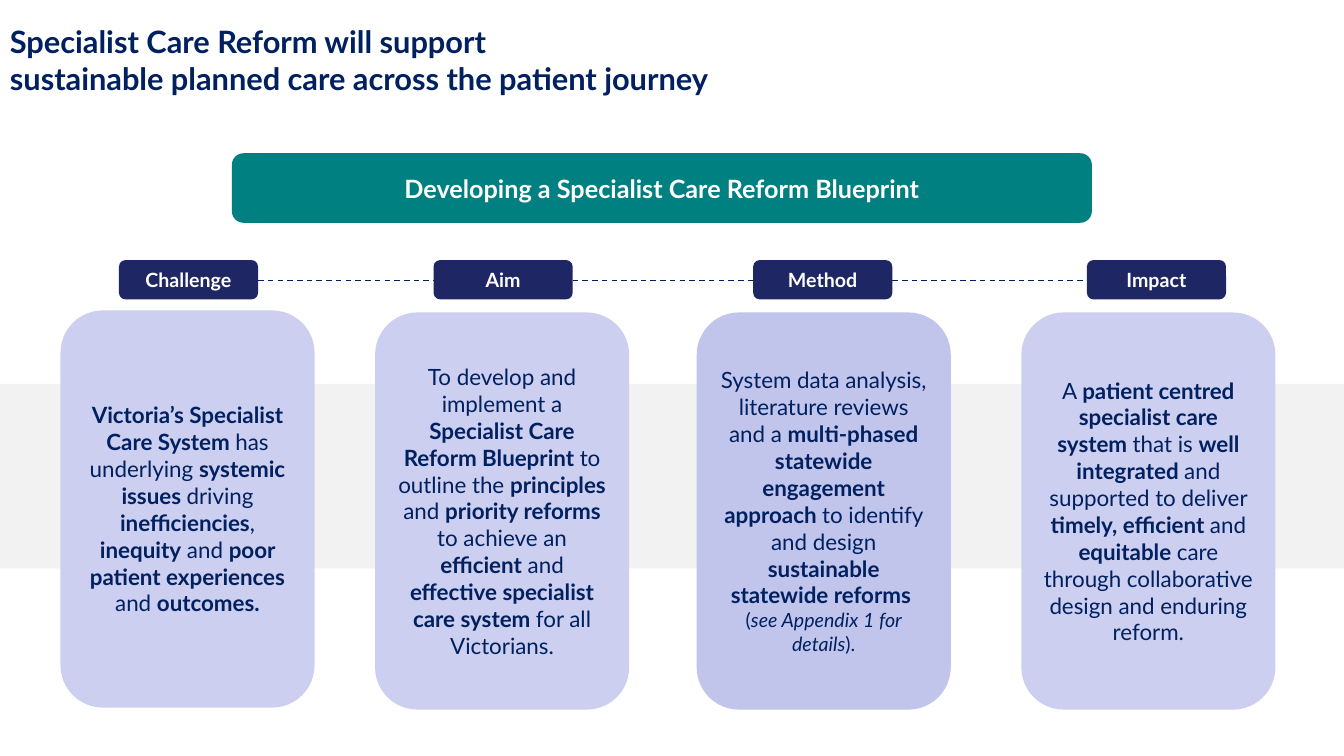
import pptx
import pptx.dml.color
import pptx.enum.dml
import pptx.enum.shapes
import pptx.enum.text
import pptx.oxml.ns
import pptx.util
from lxml import etree

TITLE = [
    "Specialist Care Reform will support",
    "sustainable planned care across the patient journey",
]
BANNER = "Developing a Specialist Care Reform Blueprint"

STAGES = [
    {
        "name": "Challenge", "tag_left": 1.18, "card_left": 0.6, "card_top": 3.08, "fill": "card",
        "text": "*Victoria’s Specialist Care System *has underlying *systemic issues *driving "
                "*inefficiencies*, *inequity* and *poor patient experiences *and *outcomes.*",
    },
    {
        "name": "Aim", "tag_left": 4.3, "card_left": 3.72, "card_top": 3.1, "fill": "card",
        "text": "To develop and implement a *Specialist Care Reform Blueprint *to outline the "
                "*principles *and *priority reforms *to achieve an *efficient* and "
                "*effective specialist care system *for all Victorians.",
    },
    {
        "name": "Method", "tag_left": 7.47, "card_left": 6.91, "card_top": 3.1, "fill": "card_accent",
        "text": "System data analysis, literature reviews and a *multi-phased statewide engagement "
                "approach *to identify and design *sustainable statewide reforms *",
        "note": "(*see Appendix 1 for details*).",
    },
    {
        "name": "Impact", "tag_left": 10.78, "card_left": 10.13, "card_top": 3.1, "fill": "card",
        "text": "A *patient centred specialist care system *that is *well integrated *and supported "
                "to deliver *timely, efficient *and *equitable* care through collaborative design "
                "and enduring reform.",
    },
]

THEME = {
    "font": "Lato",
    "colors": {"ink": "002060", "white": "FFFFFF", "band": "F2F2F2", "banner": "008080",
               "tag": "1F2664", "card": "CCCFEF", "card_accent": "C1C5EC"},
    "sizes": {"title": 22, "banner": 18, "body": 16, "tag": 14, "note": 14},
}

PAGE_WIDTH, PAGE_HEIGHT = 13.33, 7.5
TAG_TOP, TAG_WIDTH, TAG_HEIGHT = 2.58, 1.38, 0.39
CARD_WIDTH, CARD_HEIGHT = 2.52, 3.94
LINE_Y = 2.78

Inches = pptx.util.Inches
SHAPES = pptx.enum.shapes.MSO_SHAPE
ALIGN = pptx.enum.text.PP_ALIGN

deck = pptx.Presentation()
deck.slide_width, deck.slide_height = Inches(PAGE_WIDTH), Inches(PAGE_HEIGHT)
page = deck.slides.add_slide(deck.slide_layouts[6])


def color(name):
    return pptx.dml.color.RGBColor.from_string(THEME["colors"][name])


def write(para, text, size, ink="ink", bold=False, align=ALIGN.CENTER, emphasis="bold"):
    para.alignment = align
    for index, part in enumerate(text.split("*")):
        if part:
            span = para.add_run()
            span.text = part
            span.font.name = THEME["font"]
            span.font.size = pptx.util.Pt(THEME["sizes"][size])
            span.font.color.rgb = color(ink)
            span.font.bold = bold
            if index % 2:
                setattr(span.font, emphasis, True)


def add_panel(kind, left, top, width, height, fill):
    panel = page.shapes.add_shape(kind, Inches(left), Inches(top), Inches(width), Inches(height))
    panel.shadow.inherit = False
    panel.fill.solid()
    panel.fill.fore_color.rgb = color(fill)
    panel.line.fill.background()
    panel.text_frame.word_wrap = True
    panel.text_frame.vertical_anchor = pptx.enum.text.MSO_ANCHOR.MIDDLE
    return panel.text_frame


def add_link(start, end):
    link = page.shapes.add_connector(pptx.enum.shapes.MSO_CONNECTOR.STRAIGHT,
                                     Inches(start), Inches(LINE_Y), Inches(end), Inches(LINE_Y))
    link.line.color.rgb = color("ink")
    link.line.width = pptx.util.Pt(1)
    link.line.dash_style = pptx.enum.dml.MSO_LINE.DASH
    etree.SubElement(link._element.spPr, pptx.oxml.ns.qn("a:effectLst"))


add_panel(SHAPES.RECTANGLE, 0, 3.81, PAGE_WIDTH, 1.83, "band")

title = page.shapes.add_textbox(0, Inches(0.18), Inches(8.28), Inches(0.99)).text_frame
title.word_wrap = True
for index, line in enumerate(TITLE):
    para = title.add_paragraph() if index else title.paragraphs[0]
    write(para, line, "title", bold=True, align=ALIGN.LEFT)

banner = add_panel(SHAPES.ROUNDED_RECTANGLE, 2.3, 1.52, 8.53, 0.69, "banner")
write(banner.paragraphs[0], BANNER, "banner", ink="white", bold=True)

for stage, following in zip(STAGES, STAGES[1:]):
    add_link(stage["tag_left"] + TAG_WIDTH, following["tag_left"])

for stage in STAGES:
    tag = add_panel(SHAPES.ROUNDED_RECTANGLE, stage["tag_left"], TAG_TOP, TAG_WIDTH, TAG_HEIGHT, "tag")
    write(tag.paragraphs[0], stage["name"], "tag", ink="white", bold=True)
    card = add_panel(SHAPES.ROUNDED_RECTANGLE, stage["card_left"], stage["card_top"],
                     CARD_WIDTH, CARD_HEIGHT, stage["fill"])
    write(card.paragraphs[0], stage["text"], "body")
    if "note" in stage:
        write(card.add_paragraph(), stage["note"], "note", emphasis="italic")

deck.save("out.pptx")
